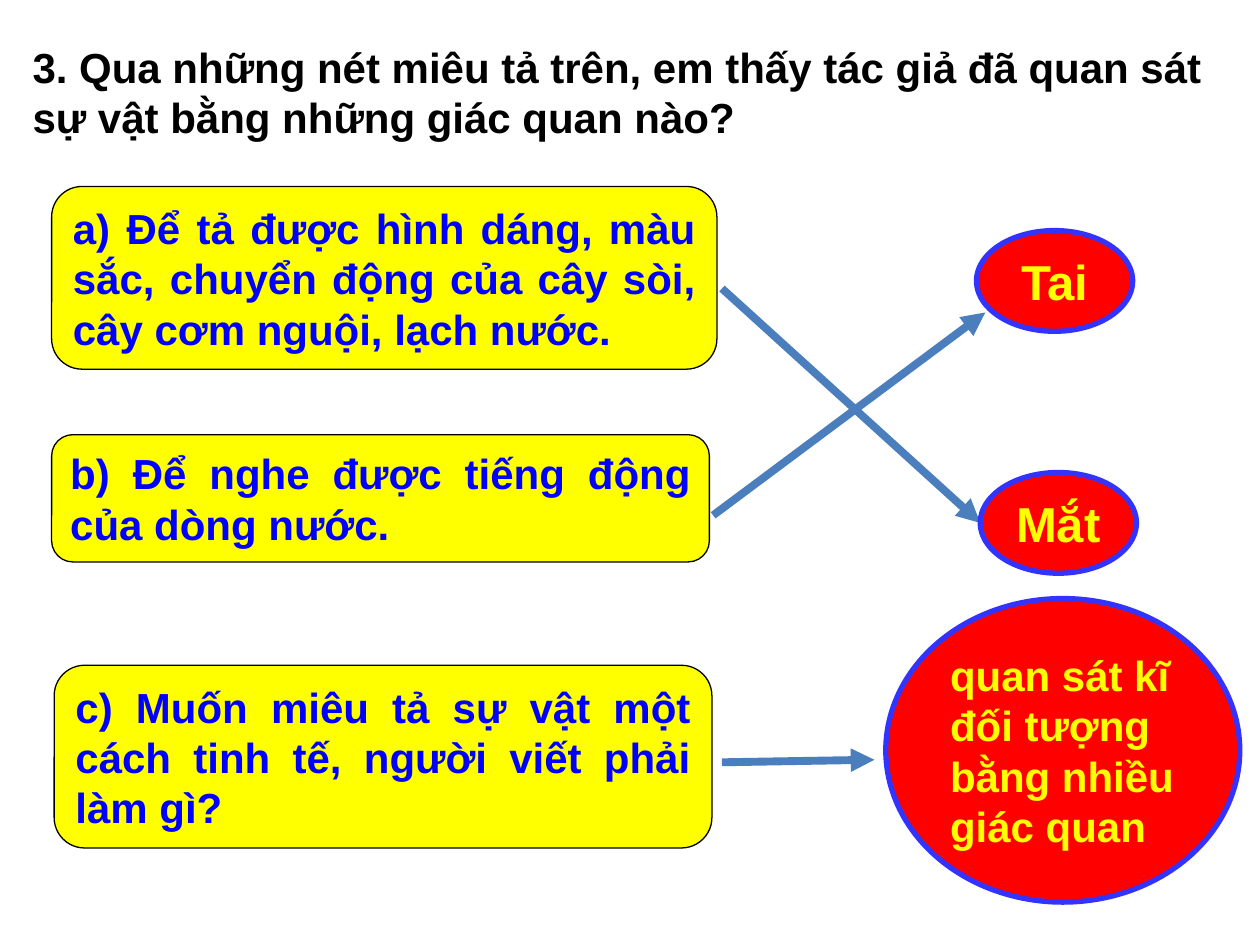
from lxml.etree import SubElement
from pptx import Presentation
from pptx.dml.color import RGBColor
from pptx.enum.shapes import MSO_CONNECTOR, MSO_SHAPE
from pptx.enum.text import MSO_ANCHOR, MSO_AUTO_SIZE, PP_ALIGN
from pptx.oxml.ns import qn
from pptx.util import Inches, Pt

QUESTION = "3. Qua những nét miêu tả trên, em thấy tác giả đã quan sát sự vật bằng những giác quan nào?"
PROMPTS = [
    ("a) Để tả được hình dáng, màu sắc, chuyển động của cây sòi, cây cơm nguội, lạch nước.",
     (0.41, 1.48, 5.28, 1.45)),
    ("b) Để nghe được tiếng động của dòng nước.", (0.41, 3.45, 5.22, 1.01)),
    ("c) Muốn miêu tả sự vật một cách tinh tế, người viết phải làm gì?",
     (0.43, 5.28, 5.22, 1.45)),
]
ANSWERS = [
    ("Tai", (7.75, 1.83, 1.24, 0.8), {"size": 28, "align": PP_ALIGN.CENTER}),
    ("Mắt", (7.78, 3.75, 1.24, 0.8), {"size": 28, "align": PP_ALIGN.CENTER, "wrap": False}),
    ("quan sát kĩ đối tượng bằng nhiều giác quan", (7.03, 4.75, 2.81, 2.41), {}),
]
ARROWS = [
    ((5.73, 2.29), (7.78, 4.15)),
    ((5.66, 4.09), (7.82, 2.48)),
    ((5.73, 6.05), (6.94, 6.03)),
]


def color(value):
    """Turn a hex string into a colour."""
    return RGBColor.from_string(value)


def write_text(shape, text, size=24, fill="000000", align=PP_ALIGN.LEFT,
               anchor=MSO_ANCHOR.MIDDLE, wrap=True):
    """Write one bold paragraph into a shape."""
    frame = shape.text_frame
    frame.word_wrap = wrap
    frame.auto_size = MSO_AUTO_SIZE.SHAPE_TO_FIT_TEXT
    frame.vertical_anchor = anchor
    paragraph = frame.paragraphs[0]
    paragraph.alignment = align
    run = paragraph.add_run()
    run.text = text
    run.font.name = "Arial"
    run.font.size = Pt(size)
    run.font.bold = True
    run.font.color.rgb = color(fill)


def add_panel(slide, kind, box, fill, line, width):
    """Add a filled and outlined shape in the given box."""
    shape = slide.shapes.add_shape(kind, *map(Inches, box))
    shape.shadow.inherit = False
    shape.fill.solid()
    shape.fill.fore_color.rgb = color(fill)
    shape.line.color.rgb = color(line)
    shape.line.width = Pt(width)
    return shape


def add_question(slide, box):
    """Add the question at the top of the slide."""
    shape = slide.shapes.add_textbox(*map(Inches, box))
    write_text(shape, QUESTION, anchor=MSO_ANCHOR.TOP)


def add_prompt(slide, text, box):
    """Add a yellow prompt card."""
    shape = add_panel(slide, MSO_SHAPE.ROUNDED_RECTANGLE, box, "FFFF00", "000000", 0.75)
    write_text(shape, text, fill="0000FF", align=PP_ALIGN.JUSTIFY)


def add_answer(slide, text, box, text_format):
    """Add a red answer oval."""
    shape = add_panel(slide, MSO_SHAPE.OVAL, box, "FF0000", "3333FF", 3)
    write_text(shape, text, fill="FFFF00", **text_format)


def add_arrow(slide, start, end):
    """Add an arrow from a prompt to its answer."""
    connector = slide.shapes.add_connector(
        MSO_CONNECTOR.STRAIGHT, *map(Inches, start + end))
    connector.line.color.rgb = color("4B7EBC")
    connector.line.width = Pt(4.5)
    SubElement(connector.line._get_or_add_ln(), qn("a:tailEnd"), type="triangle")
    SubElement(connector._element.spPr, qn("a:effectLst"))


def main():
    """Build and save the matching exercise."""
    presentation = Presentation()
    presentation.slide_width = Inches(10)
    presentation.slide_height = Inches(7.5)
    slide = presentation.slides.add_slide(presentation.slide_layouts[6])
    add_question(slide, (0.16, 0.28, 9.69, 0.91))
    for text, box in PROMPTS:
        add_prompt(slide, text, box)
    for start, end in ARROWS:
        add_arrow(slide, start, end)
    for text, box, text_format in ANSWERS:
        add_answer(slide, text, box, text_format)
    presentation.save("out.pptx")


if __name__ == "__main__":
    main()
